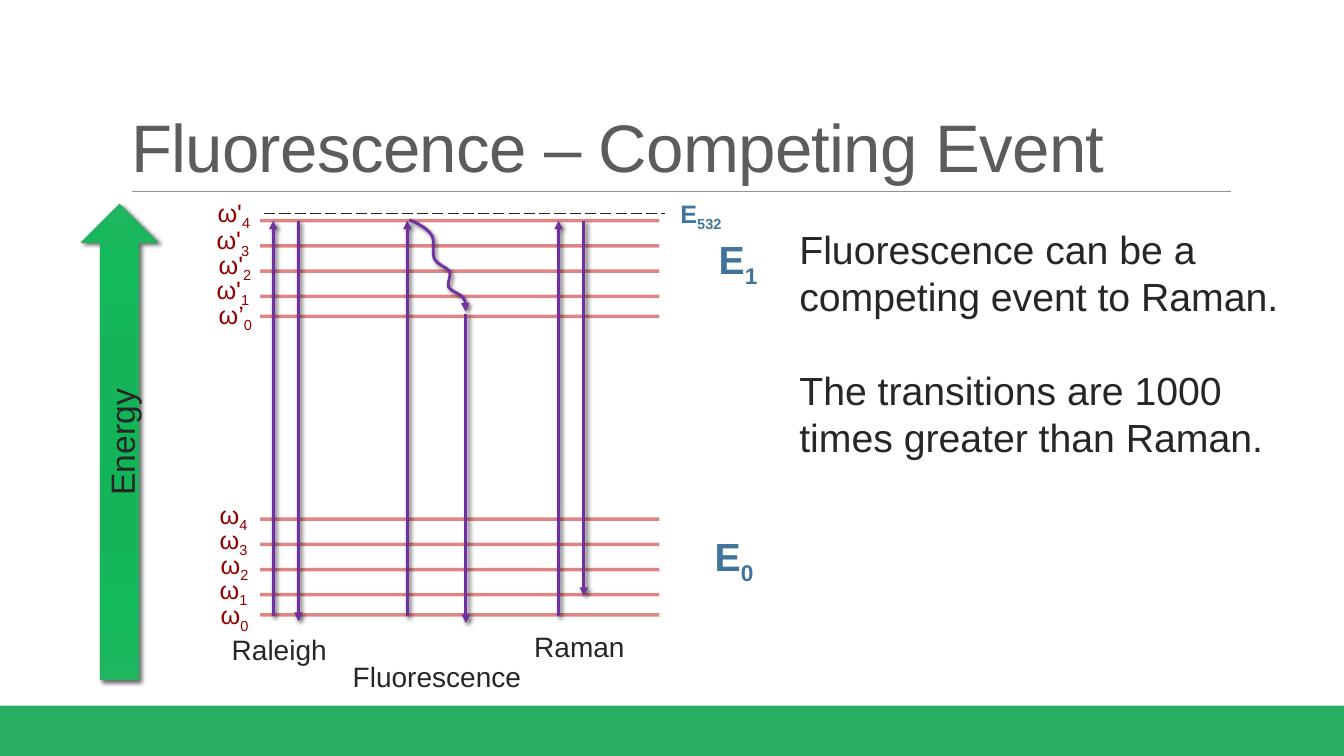
"""Build a slide on fluorescence as an event competing with Raman scattering."""
from lxml import etree
from pptx import Presentation
from pptx.dml.color import RGBColor
from pptx.enum import dml, shapes, text
from pptx.oxml import ns, parse_xml
from pptx.util import Inches, Pt

GREEN = RGBColor(0x27, 0xAE, 0x61)
GREY = RGBColor(0x92, 0x92, 0x92)
TITLE_GREY = RGBColor(0x5C, 0x5C, 0x5C)
INK = RGBColor(0x26, 0x26, 0x26)
LEVEL_RED = RGBColor(0xC0, 0x00, 0x00)
LABEL_RED = RGBColor(0x90, 0x00, 0x00)
BLUE = RGBColor(0x40, 0x74, 0x9B)
PURPLE = RGBColor(0x70, 0x30, 0xA0)

TITLE = "Fluorescence – Competing Event"
BODY = ["Fluorescence can be a competing event to Raman.",
        "The transitions are 1000 times greater than Raman."]
LEVEL_LEFT, LEVEL_RIGHT = 2.58, 6.54
LEVEL_OFFSETS = [0, 0.25, 0.5, 0.75, 0.95]
EXCITED_TOP, GROUND_TOP = 2.19, 5.15
EXCITED_LABELS = [("ω'", "4", 2.06, 1.91), ("ω'", "3", 2.05, 2.18),
                  ("ω'", "2", 2.07, 2.42), ("ω'", "1", 2.05, 2.67),
                  ("ω’", "0", 2.07, 2.92)]
GROUND_LABEL_LEFTS = [2.08, 2.08, 2.09, 2.08, 2.09]
STATES = [("0", 6.99, 5.23, 0.61, 0.57, 28), ("1", 7.03, 2.29, 0.61, 0.57, 28),
          ("532", 6.65, 1.92, 0.65, 0.4, 18)]
TRANSITIONS = [(2.71, 6.11, 2.19), (2.96, 2.19, 6.16), (4.04, 6.11, 2.19),
               (4.62, 3.12, 6.18), (5.54, 6.11, 2.19), (5.79, 2.19, 5.91)]
RELAXATION = [(4.06, 2.18), (4.15, 2.22), (4.23, 2.26), (4.28, 2.33),
              (4.32, 2.39), (4.28, 2.51), (4.31, 2.57), (4.34, 2.63),
              (4.43, 2.65), (4.46, 2.69), (4.48, 2.74), (4.43, 2.8),
              (4.45, 2.85), (4.47, 2.89), (4.56, 2.91), (4.59, 2.95),
              (4.62, 2.99), (4.62, 3.04), (4.62, 3.09)]
PROCESSES = [("Raleigh", 2.2, 6.23, 1.16), ("Fluorescence", 3.4, 6.49, 1.89),
             ("Raman", 5.2, 6.2, 1.11)]
ENERGY_STOPS = [(0, "11B558"), (34, "15B459"), (70, "12BA5A"), (100, "20B560")]


def add_run(paragraph, words, size, color, bold=None, subscript=False):
    run = paragraph.add_run()
    run.text = words
    run.font.name = "Arial"
    run.font.size = Pt(size)
    run.font.color.rgb = color
    run.font.bold = bold
    if subscript:
        run.font._element.set("baseline", "-25000")
    return run


def add_label(slide, box, words, size, color, subscript="", bold=None):
    label = slide.shapes.add_textbox(*map(Inches, box))
    label.text_frame.word_wrap = False
    label.text_frame.auto_size = text.MSO_AUTO_SIZE.SHAPE_TO_FIT_TEXT
    paragraph = label.text_frame.paragraphs[0]
    add_run(paragraph, words, size, color, bold)
    if subscript:
        add_run(paragraph, subscript, size, color, bold, True)
    return label


def set_effects(shape, shadow=False):
    properties = shape._element.spPr
    effects = etree.SubElement(properties, ns.qn("a:effectLst"))
    if shadow:
        outer = etree.SubElement(effects, ns.qn("a:outerShdw"), blurRad=str(Pt(3)),
                                 dist=str(Pt(2)), dir="2700000", algn="tl", rotWithShape="0")
        color = etree.SubElement(outer, ns.qn("a:srgbClr"), val="000000")
        etree.SubElement(color, ns.qn("a:alpha"), val="60000")


def set_line(shape, color, width):
    shape.line.color.rgb = color
    shape.line.width = Pt(width)


def add_line(slide, start, end, color, width, shadow=False):
    line = slide.shapes.add_connector(shapes.MSO_CONNECTOR.STRAIGHT,
                                      *map(Inches, start + end))
    set_line(line, color, width)
    set_effects(line, shadow)
    return line


def add_arrowhead(shape):
    etree.SubElement(shape.line._get_or_add_ln(), ns.qn("a:tailEnd"), type="triangle")


def add_title(slide):
    title = slide.shapes.title
    title.left, title.top, title.width, title.height = map(Inches, (1.2, 0.31, 11, 1.59))
    title.text_frame.vertical_anchor = text.MSO_ANCHOR.BOTTOM
    title.text_frame.auto_size = text.MSO_AUTO_SIZE.NONE
    paragraph = title.text_frame.paragraphs[0]
    paragraph.alignment = text.PP_ALIGN.LEFT
    paragraph.line_spacing = 0.85
    add_run(paragraph, TITLE, 48, TITLE_GREY).font._element.set("spc", "-50")


def add_levels(slide):
    for top in (GROUND_TOP, EXCITED_TOP):
        for offset in LEVEL_OFFSETS:
            level = add_line(slide, (LEVEL_LEFT, top + offset), (LEVEL_RIGHT, top + offset),
                             LEVEL_RED, 2.5)
            color = level.line._get_or_add_ln().find(".//" + ns.qn("a:srgbClr"))
            etree.SubElement(color, ns.qn("a:alpha"), val="48000")
    for index, left in enumerate(GROUND_LABEL_LEFTS):
        add_label(slide, (left, 4.9 + 0.25 * index, 0.49, 0.4), "ω", 18, LABEL_RED,
                  str(4 - index))
    for symbol, number, left, top in EXCITED_LABELS:
        add_label(slide, (left, top, 0.54, 0.4), symbol, 18, LABEL_RED, number)
    for number, left, top, width, height, size in STATES:
        add_label(slide, (left, top, width, height), "E", size, BLUE, number, True)
    laser = add_line(slide, (2.62, 2.12), (6.6, 2.12), INK, 1)
    laser.line.dash_style = dml.MSO_LINE.LONG_DASH


def add_relaxation(slide):
    points = [(Inches(x), Inches(y)) for x, y in RELAXATION]
    builder = slide.shapes.build_freeform(*points[0])
    builder.add_line_segments(points[1:], close=False)
    decay = builder.convert_to_shape()
    segments = list(decay._element.iter(ns.qn("a:lnTo")))
    for first in range(0, len(segments), 3):
        curve = etree.Element(ns.qn("a:cubicBezTo"))
        segments[first].addprevious(curve)
        for segment in segments[first:first + 3]:
            curve.append(segment[0])
            segment.getparent().remove(segment)
    decay.fill.background()
    set_line(decay, PURPLE, 2)
    add_arrowhead(decay)
    set_effects(decay, True)


def add_energy_axis(slide):
    axis = slide.shapes.add_shape(shapes.MSO_SHAPE.UP_ARROW,
                                  *map(Inches, (0.81, 2.03, 0.75, 4.71)))
    set_line(axis, GREEN, 1)
    stops = "".join(f'<a:gs pos="{position * 1000}"><a:srgbClr val="{color}"/></a:gs>'
                    for position, color in ENERGY_STOPS)
    gradient = parse_xml(
        f'<a:gradFill {ns.nsdecls("a")} rotWithShape="1"><a:gsLst>{stops}</a:gsLst>'
        '<a:path path="circle"><a:fillToRect l="100000" t="100000" r="100000" b="100000"/>'
        '</a:path></a:gradFill>')
    axis.line._get_or_add_ln().addprevious(gradient)
    set_effects(axis, True)
    add_label(slide, (0.57, 4.13, 1.27, 0.5), "Energy", 24, INK).rotation = 270


def add_body(slide):
    body = slide.shapes.add_textbox(*map(Inches, (7.83, 2.19, 5.09, 2.46)))
    frame = body.text_frame
    frame.word_wrap = True
    for index, sentence in enumerate(BODY):
        paragraph = frame.add_paragraph() if index else frame.paragraphs[0]
        if index:
            paragraph.space_before = Pt(33)
        add_run(paragraph, sentence, 28, INK)


def main():
    deck = Presentation()
    deck.slide_width, deck.slide_height = Inches(13.33), Inches(7.5)
    slide = deck.slides.add_slide(deck.slide_layouts[5])
    footer = slide.shapes.add_shape(shapes.MSO_SHAPE.RECTANGLE,
                                    *map(Inches, (0, 7, 13.33, 0.5)))
    footer.shadow.inherit = False
    footer.fill.solid()
    footer.fill.fore_color.rgb = GREEN
    footer.line.fill.background()
    add_line(slide, (1.31, 1.9), (12.21, 1.9), GREY, 0.5)
    add_title(slide)
    add_levels(slide)
    for x, start, end in TRANSITIONS:
        add_arrowhead(add_line(slide, (x, start), (x, end), PURPLE, 2, True))
    add_relaxation(slide)
    add_energy_axis(slide)
    for process, left, top, width in PROCESSES:
        add_label(slide, (left, top, width, 0.44), process, 20, INK)
    add_body(slide)
    deck.save("out.pptx")


if __name__ == "__main__":
    main()
